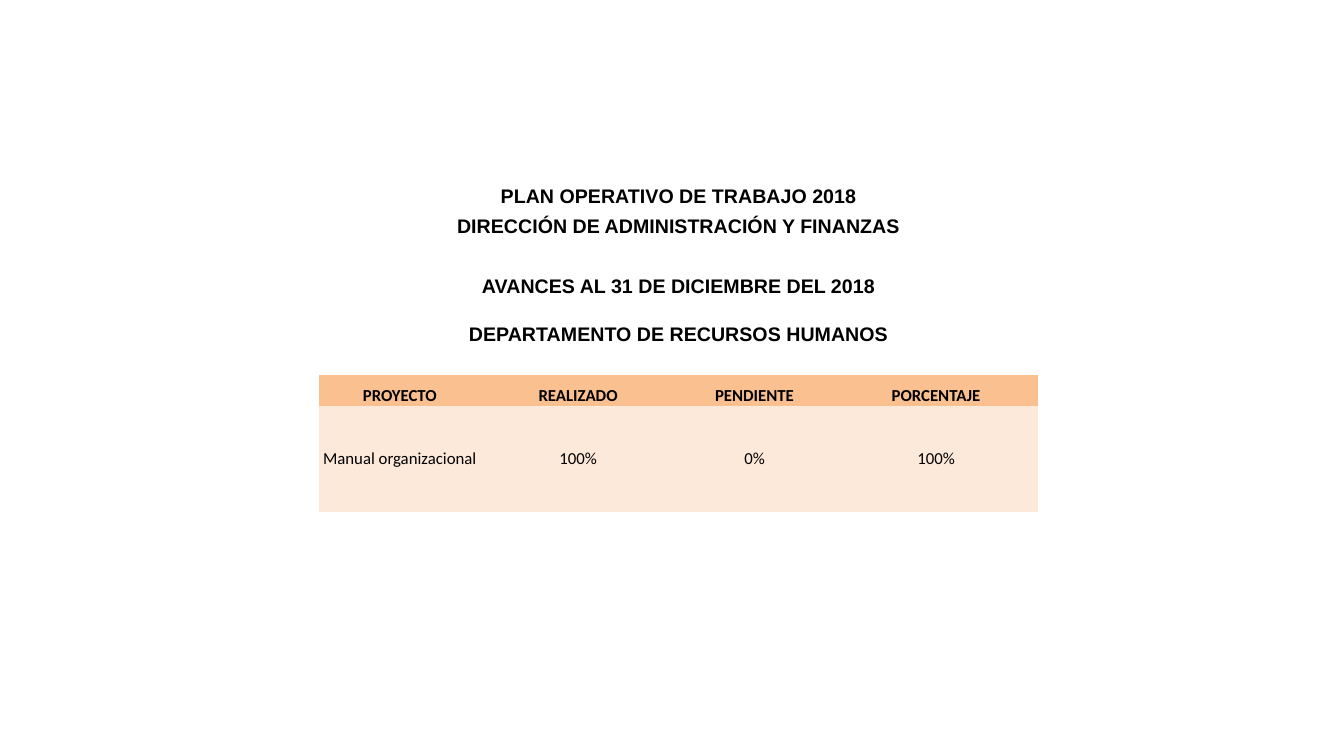
from dataclasses import dataclass

from lxml.etree import SubElement
from pptx import Presentation
from pptx.dml.color import RGBColor
from pptx.enum.text import MSO_ANCHOR as Anchor, PP_ALIGN as Align
from pptx.oxml.ns import qn
from pptx.table import Table, _Cell as Cell
from pptx.util import Cm, Pt


@dataclass(frozen=True)
class Theme:
    white: RGBColor = RGBColor(0xFF, 0xFF, 0xFF)
    header: RGBColor = RGBColor(0xFA, 0xC0, 0x90)
    body: RGBColor = RGBColor(0xFD, 0xE9, 0xD9)
    text: RGBColor = RGBColor(0, 0, 0)
    heading_font: str = "Arial"
    table_font: str = "Calibri"
    heading_size: int = 14
    table_size: int = 12


THEME = Theme()
NO_STYLE_NO_GRID = "{2D5ABB26-0587-4C30-8999-92F81FD0307C}"
COLUMN_WIDTHS = (4.09, 4.9, 3.99, 5.16)


@dataclass(frozen=True)
class Row:
    height: float
    fill: RGBColor
    texts: tuple[str, ...] = ()
    font: str = THEME.table_font
    size: int = THEME.table_size
    bold: bool = False
    anchor: Anchor = Anchor.BOTTOM


def heading(text: str, height: float = 0.76) -> Row:
    return Row(height, THEME.white, (text,), THEME.heading_font, THEME.heading_size, True)


ROWS = (
    heading("PLAN OPERATIVO DE TRABAJO 2018"),
    heading("DIRECCIÓN DE ADMINISTRACIÓN Y FINANZAS"),
    Row(0.76, THEME.white),
    heading("AVANCES AL 31 DE DICIEMBRE DEL 2018"),
    heading("DEPARTAMENTO DE RECURSOS HUMANOS", 1.19),
    Row(0.76, THEME.white),
    Row(0.76, THEME.header, ("PROYECTO", "REALIZADO", "PENDIENTE", "PORCENTAJE"), bold=True),
    Row(0.69, THEME.body),
    Row(1.3, THEME.body, ("Manual organizacional", "100%", "0%", "100%"), anchor=Anchor.MIDDLE),
    Row(0.69, THEME.body),
)


def format_cell(cell: Cell, row: Row) -> None:
    cell.fill.solid()
    cell.fill.fore_color.rgb = row.fill
    cell.margin_left = cell.margin_right = cell.margin_top = cell.margin_bottom = 0
    cell.vertical_anchor = row.anchor


def write_cell(cell: Cell, text: str, row: Row) -> None:
    para = cell.text_frame.paragraphs[0]
    para.text = text
    para.alignment = Align.CENTER
    para.font.name = row.font
    para.font.size = Pt(row.size)
    para.font.bold = row.bold
    para.font.color.rgb = THEME.text


def shrink_empty_cell(cell: Cell, row: Row) -> None:
    para = cell.text_frame.paragraphs[0]
    SubElement(para._p, qn("a:endParaRPr"), sz=str(row.size * 100))


def fill_row(table: Table, index: int, row: Row) -> None:
    table.rows[index].height = Cm(row.height)
    cells = list(table.rows[index].cells)
    for cell in cells:
        format_cell(cell, row)
    if len(row.texts) == 1:
        cells[0].merge(cells[-1])
    for cell, text in zip(cells, row.texts):
        write_cell(cell, text, row)
    for cell in cells[len(row.texts):]:
        shrink_empty_cell(cell, row)


def main() -> None:
    deck = Presentation()
    deck.slide_width, deck.slide_height = Cm(33.87), Cm(19.05)
    page = deck.slides.add_slide(deck.slide_layouts[6])
    frame = page.shapes.add_table(
        len(ROWS), len(COLUMN_WIDTHS), Cm(8.03), Cm(4.47),
        Cm(sum(COLUMN_WIDTHS)), Cm(sum(row.height for row in ROWS)),
    )
    table = frame.table
    table.first_row = table.horz_banding = False
    for style in frame.element.iter(qn("a:tableStyleId")):
        style.text = NO_STYLE_NO_GRID
    for column, width in zip(table.columns, COLUMN_WIDTHS):
        column.width = Cm(width)
    for index, row in enumerate(ROWS):
        fill_row(table, index, row)
    deck.save("out.pptx")


if __name__ == "__main__":
    main()
